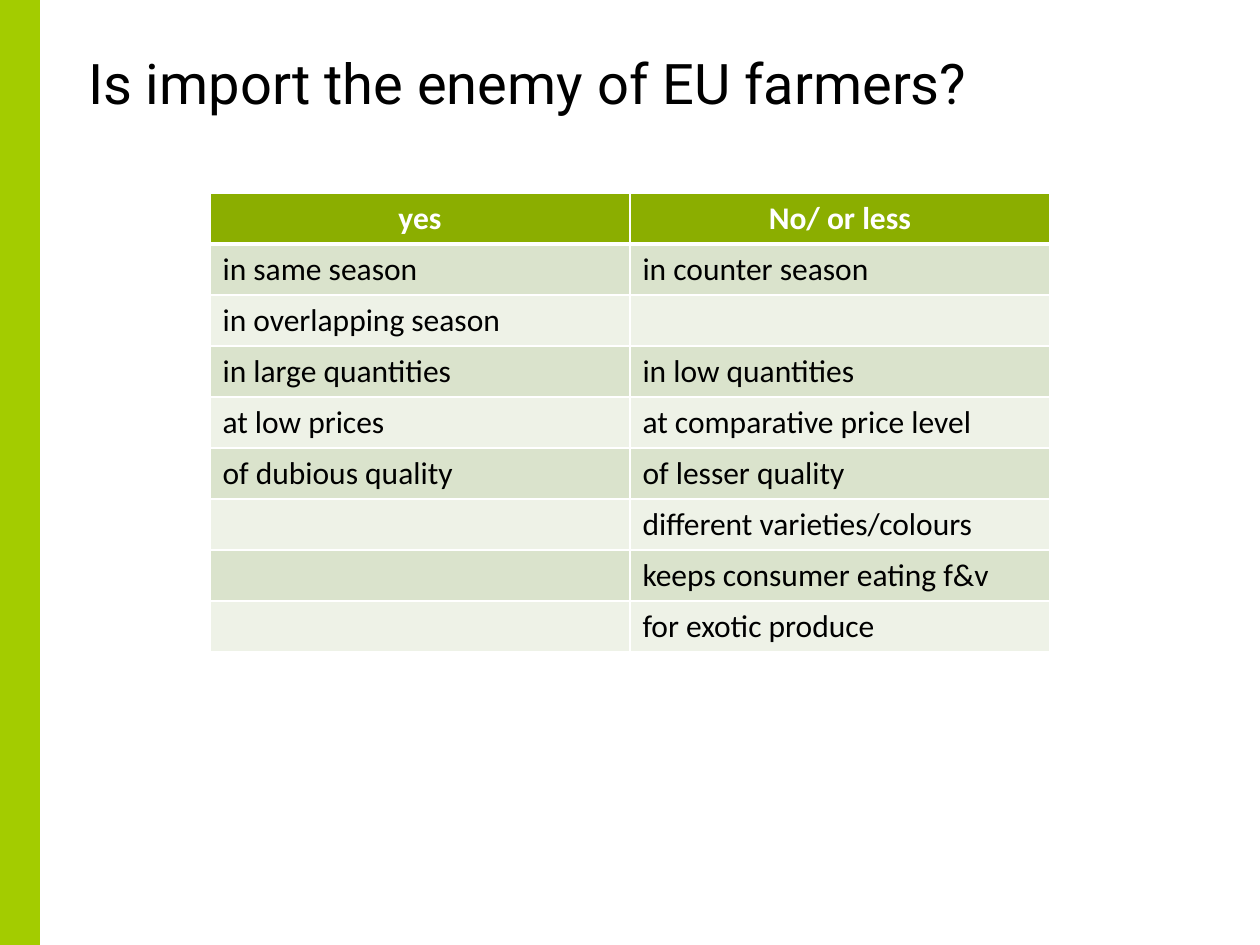
from dataclasses import dataclass

from lxml import etree
from pptx import Presentation
from pptx.dml.color import RGBColor
from pptx.enum.shapes import MSO_SHAPE
from pptx.enum.text import PP_ALIGN
from pptx.oxml.ns import qn
from pptx.util import Emu, Pt

RECTANGLE = MSO_SHAPE.RECTANGLE
LEFT, CENTER = PP_ALIGN.LEFT, PP_ALIGN.CENTER
PX = 914400 / 126


@dataclass(frozen=True)
class Theme:
    stripe: str = "A3CC00"
    header: str = "8BAE00"
    bands: tuple = ("DAE3CC", "EEF2E7")
    border: str = "FFFFFF"
    light_text: str = "FFFFFF"
    dark_text: str = "000000"
    title_font: str = "Roboto"
    table_font: str = "Calibri"
    title_size: int = 32
    title_line: int = 38
    table_size: int = 18


theme = Theme()


def write(frame, text, font, size, color, bold=False, align=LEFT, line=None):
    para = frame.paragraphs[0]
    para.alignment = align
    if line:
        para.line_spacing = Pt(line)
    span = para.add_run()
    span.text = text
    span.font.name = font
    span.font.size = Pt(size)
    span.font.bold = bold
    span.font.color.rgb = RGBColor.from_string(color)


def style_cell(cell, fill, bottom=1, top=1):
    """Fill a cell and draw its borders, with widths in points."""
    properties = cell._tc.get_or_add_tcPr()
    for side, width in (("L", 1), ("R", 1), ("T", top), ("B", bottom)):
        border = etree.SubElement(properties, qn(f"a:ln{side}"), w=str(Pt(width)))
        solid = etree.SubElement(border, qn("a:solidFill"))
        etree.SubElement(solid, qn("a:srgbClr"), val=theme.border)
    cell.fill.solid()
    cell.fill.fore_color.rgb = RGBColor.from_string(fill)


deck = Presentation()
deck.slide_width, deck.slide_height = Emu(round(1260 * PX)), Emu(round(945 * PX))
page = deck.slides.add_slide(deck.slide_layouts[6])

# Side stripe
stripe_box = [Emu(round(n * PX)) for n in (0, 0, 40, 945)]
stripe = page.shapes.add_shape(RECTANGLE, *stripe_box)
stripe.shadow.inherit = False
stripe.fill.solid()
stripe.fill.fore_color.rgb = RGBColor.from_string(theme.stripe)
stripe.line.fill.background()

# Title
title_box = [Emu(round(n * PX)) for n in (88, 49, 1128, 154)]
title = page.shapes.add_textbox(*title_box).text_frame
title.word_wrap = True
title.margin_left = title.margin_top = title.margin_right = title.margin_bottom = 0
write(title, "Is import the enemy of EU farmers?", font=theme.title_font,
      size=theme.title_size, color=theme.dark_text, line=theme.title_line)

# Arguments for and against
arguments = [
    ("yes", "No/ or less"),
    ("in same season", "in counter season"),
    ("in overlapping season", ""),
    ("in large quantities", "in low quantities"),
    ("at low prices", "at comparative price level"),
    ("of dubious quality", "of lesser quality"),
    ("", "different varieties/colours"),
    ("", "keeps consumer eating f&v"),
    ("", "for exotic produce"),
]
table_box = [Emu(round(n * PX)) for n in (210, 193, 840, 51 * len(arguments))]
table = page.shapes.add_table(len(arguments), 2, *table_box).table

for row, texts in enumerate(arguments):
    is_header = row == 0
    for column, text in enumerate(texts):
        cell = table.cell(row, column)
        style_cell(cell, theme.header if is_header else theme.bands[(row - 1) % 2],
                   bottom=3 if is_header else 1, top=3 if row == 1 else 1)
        if text:
            write(cell.text_frame, text, font=theme.table_font, size=theme.table_size,
                  color=theme.light_text if is_header else theme.dark_text,
                  bold=is_header, align=CENTER if is_header else LEFT)

deck.save("out.pptx")
